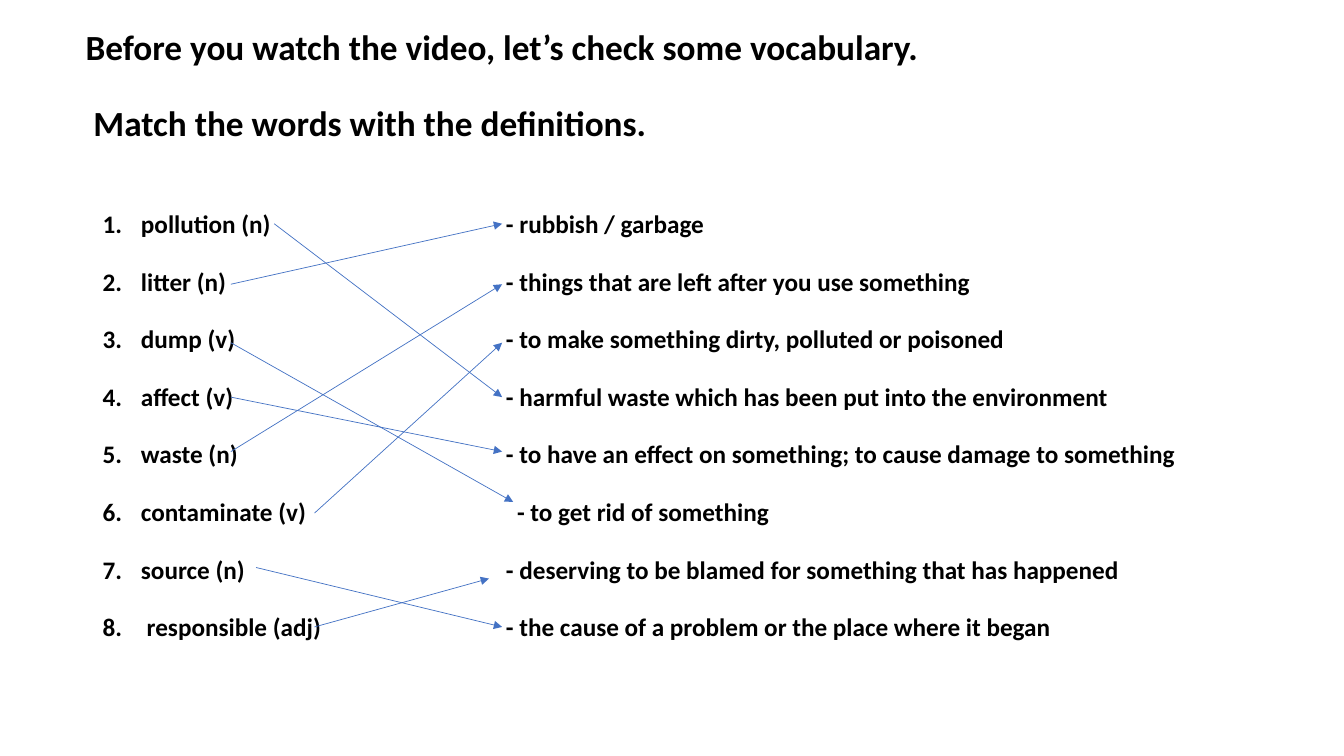
from dataclasses import dataclass

from lxml.etree import SubElement
from pptx import Presentation
from pptx.dml.color import RGBColor
from pptx.enum.shapes import MSO_CONNECTOR
from pptx.enum.text import MSO_ANCHOR
from pptx.oxml.ns import qn
from pptx.util import Inches, Pt


@dataclass(frozen=True)
class Theme:
    font: str = "Calibri"
    ink: RGBColor = RGBColor(0x00, 0x00, 0x00)
    arrow: RGBColor = RGBColor(0x44, 0x72, 0xC4)
    heading_size: float = 25.2
    list_size: float = 18
    arrow_width: float = 0.5


HEADING = [
    "Before you watch the video, let’s check some vocabulary.",
    " Match the words with the definitions.",
]

# Word, definition beside it, and where the definition starts in the box
VOCABULARY = [
    ("pollution (n)", "- rubbish / garbage", 4),
    ("litter (n)", "- things that are left after you use something", 4),
    ("dump (v)", "- to make something dirty, polluted or poisoned", 4),
    ("affect (v)", "- harmful waste which has been put into the environment", 4),
    ("waste (n)", "- to have an effect on something; to cause damage to something", 4),
    ("contaminate (v)", "- to get rid of something", 4.11),
    ("source (n)", "- deserving to be blamed for something that has happened", 4),
    (" responsible (adj)", "- the cause of a problem or the place where it began", 4),
]

# Arrow ends beside each word and each definition, row by row
WORD_ENDS = [(2.72, 2.22), (2.29, 2.82), (2.29, 3.4), (2.29, 3.94),
             (2.29, 4.48), (3.12, 5.09), (2.54, 5.63), (3.12, 6.22)]
DEFINITION_ENDS = [(4.98, 2.22), (4.98, 2.82), (4.98, 3.4), (4.98, 3.94),
                   (4.98, 4.48), (5.09, 4.98), (4.85, 5.74), (4.98, 6.22)]
# Matching definition row for each word row
ANSWERS = [3, 0, 5, 4, 1, 2, 7, 6]


class VocabularySlide:
    def __init__(self, slide, theme):
        self.slide = slide
        self.theme = theme

    def text_frame(self, left, top, width, height, **frame_format):
        box = self.slide.shapes.add_textbox(
            Inches(left), Inches(top), Inches(width), Inches(height))
        frame = box.text_frame
        for name, value in {"word_wrap": True, **frame_format}.items():
            setattr(frame, name, value)
        return frame

    def style(self, paragraph, size, **spacing):
        for name, value in spacing.items():
            setattr(paragraph, name, value)
        font = paragraph.font
        for name, value in {"name": self.theme.font, "size": Pt(size), "bold": True}.items():
            setattr(font, name, value)
        font.color.rgb = self.theme.ink

    def paragraph(self, frame, row):
        return frame.add_paragraph() if row else frame.paragraphs[0]

    def heading(self, lines):
        frame = self.text_frame(0.75, 0.4, 11.66, 1.2, margin_top=0, margin_bottom=Inches(0.27),
                                vertical_anchor=MSO_ANCHOR.MIDDLE)
        for row, line in enumerate(lines):
            heading_line = self.paragraph(frame, row)
            heading_line.text = line
            self.style(heading_line, self.theme.heading_size, line_spacing=0.9,
                       space_before=Pt(27.6 * row))

    def numbered_list(self, entries):
        frame = self.text_frame(0.92, 2, 11.5, 4.76)
        for row, (word, definition, definition_start) in enumerate(entries):
            entry = self.paragraph(frame, row)
            entry.text = f"{word}\t{definition}"
            # Hanging number, then a tab stop for the definition
            properties = entry._p.get_or_add_pPr()
            properties.set("marL", str(Inches(0.38)))
            properties.set("indent", str(-Inches(0.38)))
            SubElement(properties, qn("a:buFont"), typeface="+mj-lt")
            SubElement(properties, qn("a:buAutoNum"), type="arabicPeriod")
            stops = SubElement(properties, qn("a:tabLst"))
            SubElement(stops, qn("a:tab"), pos=str(Inches(definition_start)), algn="l")
            self.style(entry, self.theme.list_size, line_spacing=1.07,
                       space_before=Pt(10 if row else 0), space_after=Pt(8))

    def arrow(self, start, end):
        connector = self.slide.shapes.add_connector(
            MSO_CONNECTOR.STRAIGHT, *(Inches(value) for value in (*start, *end)))
        connector.line.color.rgb = self.theme.arrow
        connector.line.width = Pt(self.theme.arrow_width)
        SubElement(connector.line._get_or_add_ln(), qn("a:tailEnd"), type="triangle")
        SubElement(connector._element.spPr, qn("a:effectLst"))


def main():
    presentation = Presentation()
    presentation.slide_width = Inches(13.33)
    presentation.slide_height = Inches(7.5)
    blank_layout = presentation.slide_layouts[6]
    page = VocabularySlide(presentation.slides.add_slide(blank_layout), Theme())

    # Instructions and vocabulary
    page.heading(HEADING)
    page.numbered_list(VOCABULARY)

    # Answers
    for word_end, answer in zip(WORD_ENDS, ANSWERS):
        page.arrow(word_end, DEFINITION_ENDS[answer])

    presentation.save("out.pptx")


if __name__ == "__main__":
    main()
